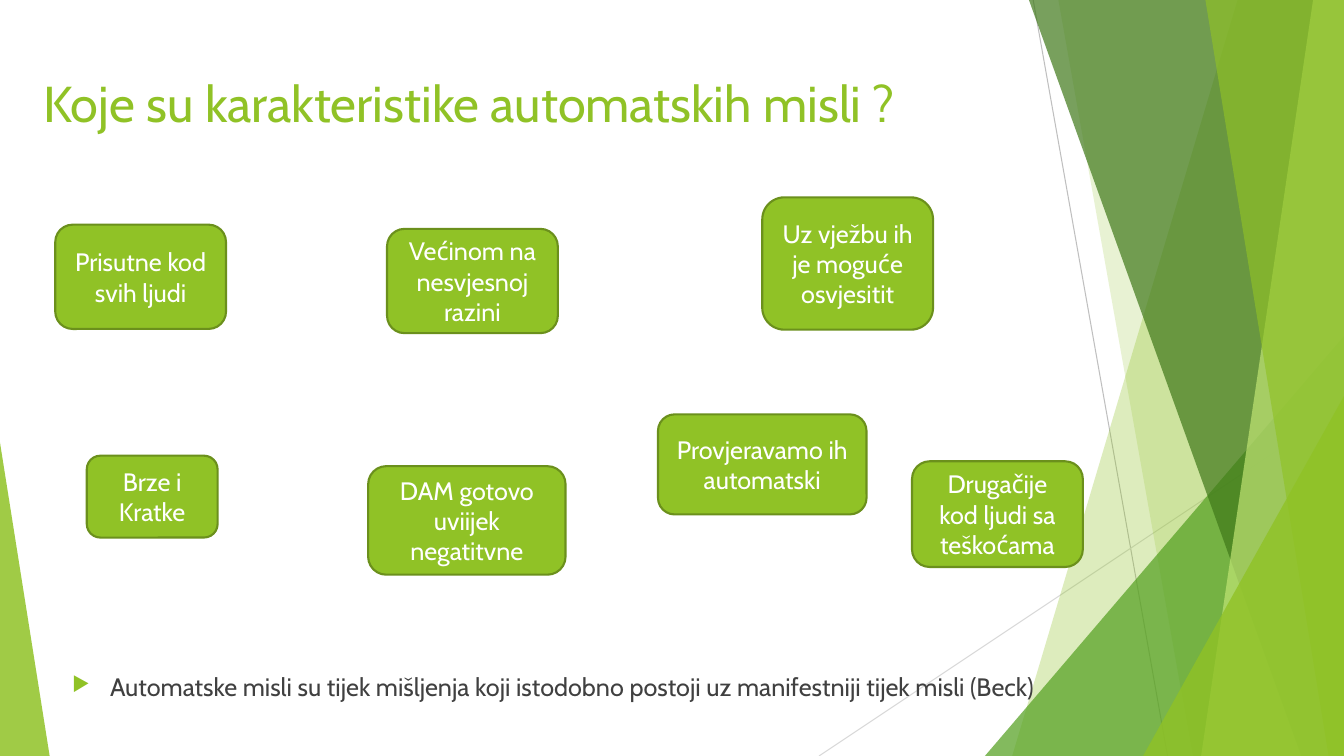
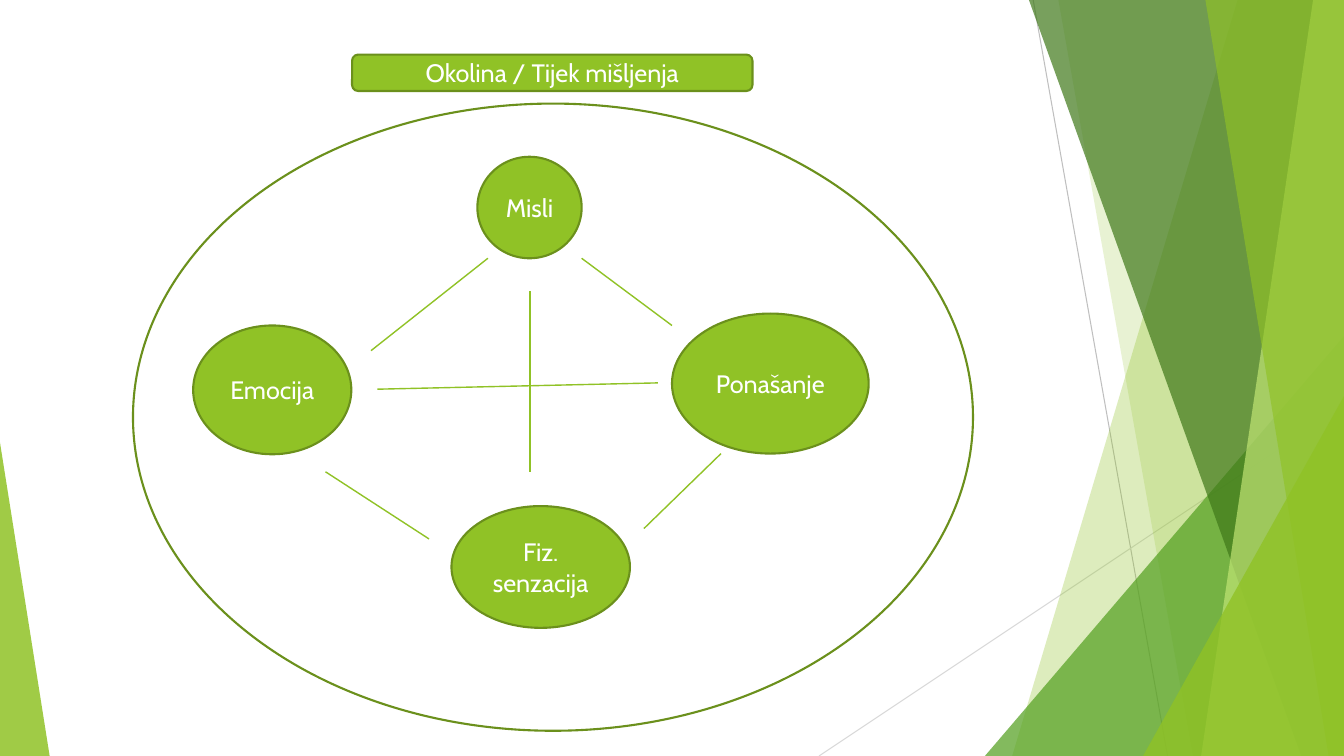
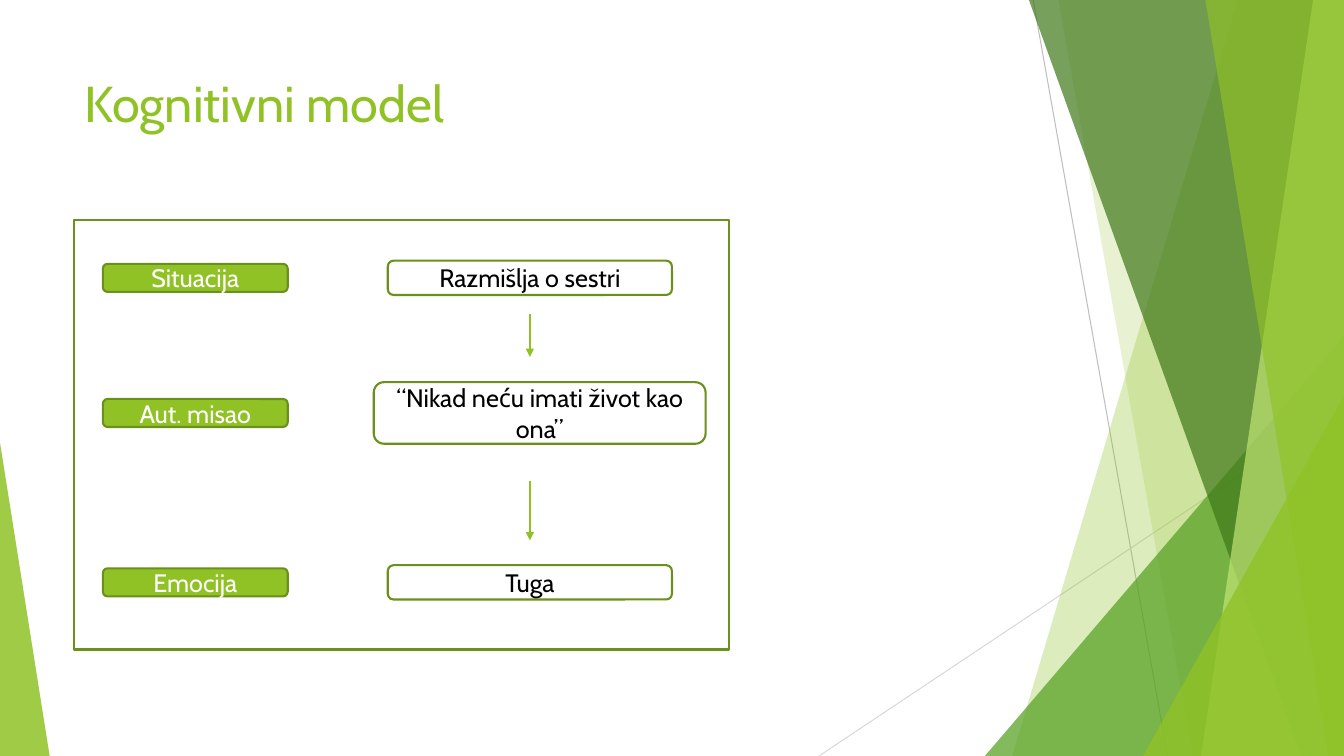
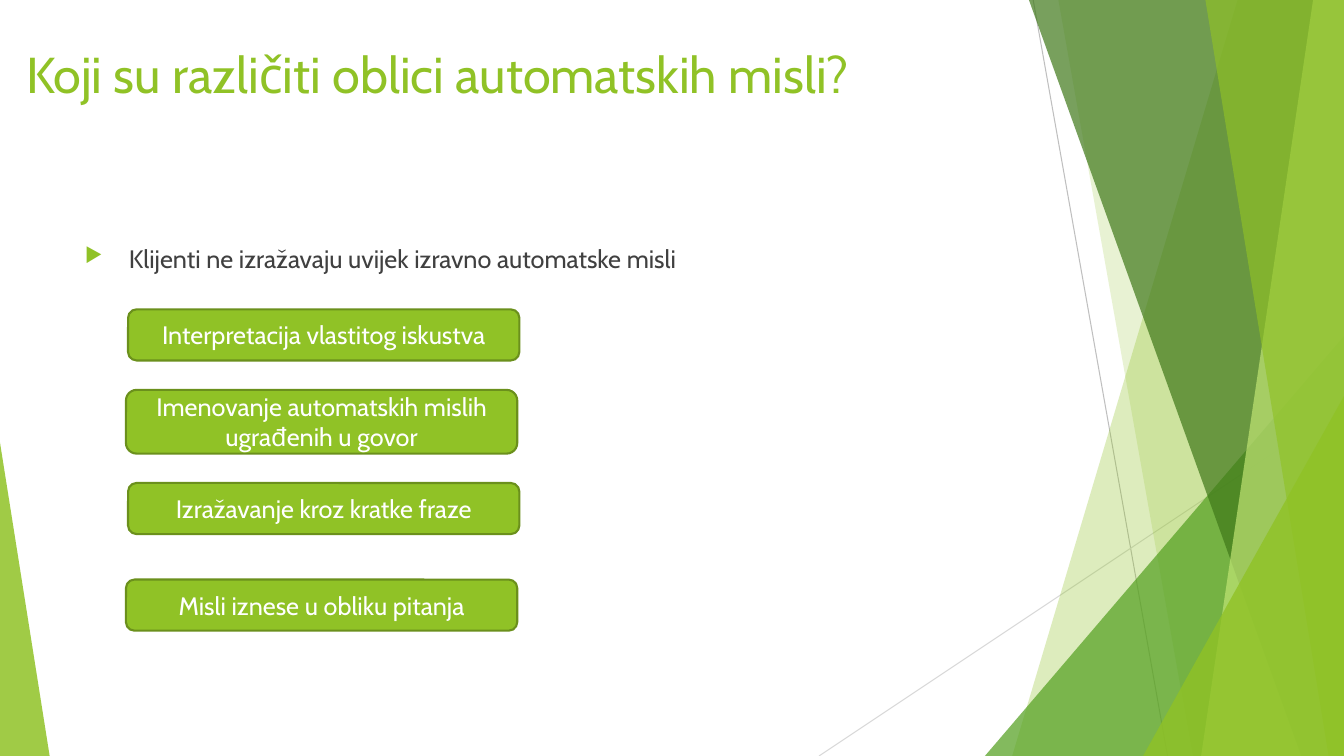
"""Four slides on automatic thoughts, in a green facet design."""
from lxml import etree
from pptx import Presentation
from pptx import util as u
from pptx.dml.color import RGBColor
from pptx.enum import shapes, text
from pptx.oxml.ns import qn

WIDTH, HEIGHT = 960, 540
FONT = "Cabin"
COLORS = {
    "green": "90C226", "edge": "6B901C", "leaf": "54A021", "forest": "3F7819",
    "lime": "C0E474", "ink": "404040", "black": "000000", "white": "FFFFFF",
    "grey": "BFBFBF", "pale": "D9D9D9",
}
ROUND = shapes.MSO_SHAPE.ROUNDED_RECTANGLE
OVAL = shapes.MSO_SHAPE.OVAL
RECTANGLE = shapes.MSO_SHAPE.RECTANGLE
TRIANGLE = shapes.MSO_SHAPE.ISOSCELES_TRIANGLE

FACET_LINES = [((738, 0), (834, HEIGHT), "grey"), ((WIDTH, 290), (585, HEIGHT), "pale")]
FACETS = [
    ("band", (884, 723), "green", 30),
    ("band", (756, 852), "green", 20),
    ("triangle", (703.5, 240, 256.5, 1), "leaf", 72),
    ("band", (735, 929.5), "forest", 70),
    ("band", (938, 858), "lime", 70),
    ("band", (861, 949), "green", 65),
    ("triangle", (816.5, 283, 143.5, 1), "green", 80),
    ("triangle", (0, 316, 35.5, 0), "green", 85),
]


def pts(values):
    """Turn numbers into point lengths."""
    return [u.Pt(value) for value in values]


def rgb(name):
    """Look up a named colour."""
    return RGBColor.from_string(COLORS[name])


def apply(target, values):
    """Set attributes from a dict."""
    for name, value in values.items():
        setattr(target, name, value)


def shift(box, offset):
    """Move an offset point or box into the given region."""
    return (box[0] + offset[0], box[1] + offset[1], *offset[2:])


def add_span(para, words, color, size=18, font=FONT):
    """Add a styled run to a paragraph."""
    span = para.add_run()
    span.text = words
    apply(span.font, {"name": font, "size": u.Pt(size)})
    span.font.color.rgb = rgb(color)


def add_line(page, start, end, color="green", width=1, arrow=False):
    """Draw a straight line, with an arrowhead at its end if asked."""
    line = page.shapes.add_connector(shapes.MSO_CONNECTOR.STRAIGHT, *pts((*start, *end)))
    line.line.color.rgb = rgb(color)
    line.line.width = u.Pt(width)
    if arrow:
        etree.SubElement(line.line._get_or_add_ln(), qn("a:tailEnd"), type="triangle")
    etree.SubElement(line._element.spPr, qn("a:effectLst"))


def add_card(page, box, words="", kind=ROUND, fill="green", color="white"):
    """Draw an outlined shape with centred text."""
    card = page.shapes.add_shape(kind, *pts(box))
    card.shadow.inherit = False
    card.line.color.rgb = rgb("edge")
    card.line.width = u.Pt(1.5)
    if fill:
        card.fill.solid()
        card.fill.fore_color.rgb = rgb(fill)
    else:
        card.fill.background()
    if words:
        frame = card.text_frame
        apply(frame, {"word_wrap": True, "vertical_anchor": text.MSO_ANCHOR.MIDDLE})
        para = frame.paragraphs[0]
        para.alignment = text.PP_ALIGN.CENTER
        add_span(para, words, color)


def add_facet(page, kind, place, color, opacity):
    """Draw one translucent facet of the background."""
    if kind == "band":
        top, bottom = place
        outline = page.shapes.build_freeform(*pts((top, 0)))
        corners = [(WIDTH, 0), (WIDTH, HEIGHT), (bottom, HEIGHT)]
        outline.add_line_segments([pts(corner) for corner in corners])
        facet = outline.convert_to_shape()
    else:
        left, top, width, apex = place
        facet = page.shapes.add_shape(TRIANGLE, *pts((left, top, width, HEIGHT - top)))
        facet.adjustments[0] = apex
    facet.shadow.inherit = False
    facet.line.fill.background()
    facet.fill.solid()
    facet.fill.fore_color.rgb = rgb(color)
    tint = facet._element.spPr.find(qn("a:solidFill"))[0]
    etree.SubElement(tint, qn("a:alpha"), val=str(opacity * 1000))


def add_page(deck):
    """Add a blank slide with the shared background."""
    page = deck.slides.add_slide(deck.slide_layouts[6])
    for start, end, color in FACET_LINES:
        add_line(page, start, end, color, 0.75)
    for facet in FACETS:
        add_facet(page, *facet)
    return page


def add_text_box(page, box):
    """Add a wrapping text box and return its first paragraph."""
    frame = page.shapes.add_textbox(*pts(box)).text_frame
    frame.word_wrap = True
    return frame.paragraphs[0]


def add_title(page, box, words):
    """Write the slide title."""
    add_span(add_text_box(page, box), words, "green", 36)


def add_bullet(page, box, spans):
    """Write a paragraph with a green arrow bullet."""
    para = add_text_box(page, box)
    props = para._p.get_or_add_pPr()
    apply_indent = {"marL": u.Pt(27), "indent": u.Pt(-27)}
    for name, value in apply_indent.items():
        props.set(name, str(value))
    tint = etree.SubElement(props, qn("a:buClr"))
    etree.SubElement(tint, qn("a:srgbClr"), val=COLORS["green"])
    etree.SubElement(props, qn("a:buSzPct"), val="80000")
    etree.SubElement(props, qn("a:buChar"), char="▶")
    for words, font in spans:
        add_span(para, words, "ink", font=font)


def add_traits(page, box):
    """Scatter the trait cards over the box."""
    traits = [
        ((0, 19.5, 122, 74.5), "Prisutne kod svih ljudi"),
        ((237, 22.5, 122, 74.5), "Većinom na nesvjesnoj razini"),
        ((505, 0, 122, 94.5), "Uz vježbu ih je moguće osvjesitit"),
        ((430.5, 155, 149, 71.5), "Provjeravamo ih automatski"),
        ((612, 188.5, 122, 75.5), "Drugačije kod ljudi sa teškoćama"),
        ((22.5, 184.5, 93.5, 58.5), "Brze i Kratke"),
        ((223.5, 192, 141, 77.5), "DAM gotovo uviijek negatitvne"),
    ]
    for place, words in traits:
        add_card(page, shift(box, place), words)


def add_cycle(page, box):
    """Draw the linked ovals inside one large oval that fills the box."""
    nodes = [
        ((43, 158.5, 113, 92), "Emocija"),
        ((246, 38, 74.5, 72.5), "Misli"),
        ((227.5, 287.5, 127.5, 87), "Fiz. senzacija"),
        ((385, 150, 140.5, 100), "Ponašanje"),
    ]
    links = [
        ((253.5, 110.5), (170, 176.5)),
        ((320.5, 110.5), (385, 158.5)),
        ((137.5, 263), (211.5, 311)),
        ((365, 303.5), (420, 250)),
        ((283.5, 134), (283.5, 263)),
        ((174.5, 204), (375, 199.5)),
    ]
    for place, words in nodes:
        add_card(page, shift(box, place), words, OVAL)
    add_card(page, box, kind=OVAL, fill=None)
    add_card(page, shift(box, (156.5, -35, 286, 26)), "Okolina / Tijek mišljenja")
    for start, end in links:
        add_line(page, shift(box, start), shift(box, end))


def add_model(page, box):
    """Draw the framed rows of labels and examples, joined by arrows."""
    rows = [
        (41.5, "Situacija", "Razmišlja o sestri", (325.5, 203, 24.5)),
        (138, "Aut. misao", "“Nikad neću imati život kao ona”", (332.5, 237, 44)),
        (259, "Emocija", "Tuga", (325.5, 203, 24.5)),
    ]
    for middle, label, example, (center, width, height) in rows:
        add_card(page, shift(box, (20.5, middle - 10, 132, 20)), label)
        place = (center - width / 2, middle - height / 2, width, height)
        add_card(page, shift(box, place), example, fill=None, color="black")
    for top, bottom in [(67.5, 98), (186.5, 229)]:
        add_line(page, shift(box, (325.5, top)), shift(box, (325.5, bottom)), arrow=True)
    add_card(page, box, kind=RECTANGLE, fill=None)


def add_forms(page, box):
    """Stack the bars that name each form of thought."""
    forms = [
        ((1.5, 0), 36.5, "Interpretacija vlastitog iskustva"),
        ((0, 57.5), 45.5, "Imenovanje automatskih mislih ugrađenih u govor"),
        ((1.5, 124), 36.5, "Izražavanje kroz kratke fraze"),
        ((0, 193), 36.5, "Misli iznese u obliku pitanja"),
    ]
    for corner, height, words in forms:
        add_card(page, shift(box, (*corner, box[2], height)), words)


def main():
    """Build and save the deck."""
    deck = Presentation()
    apply(deck, {"slide_width": u.Pt(WIDTH), "slide_height": u.Pt(HEIGHT)})

    page = add_page(deck)
    add_title(page, (24, 48, 707, 104), "Koje su karakteristike automatskih misli ?")
    add_bullet(page, (44.5, 476, 707, 47), [
        ("Automatske misli su tijek mišljenja koji istodobno postoji uz manifestniji tijek misli (Beck)", FONT),
    ])
    add_traits(page, (39.5, 141, 734, 270))

    add_cycle(add_page(deck), (95, 74, 600, 448))

    page = add_page(deck)
    add_title(page, (53.5, 48, 677, 104), "Kognitivni model")
    add_model(page, (53, 157, 467.5, 307))

    page = add_page(deck)
    add_title(page, (11.5, 27, 760, 104), "Koji su različiti oblici automatskih misli?")
    add_bullet(page, (53.5, 170, 677, 305), [
        (" ", "Times New Roman"),
        ("Klijenti ne izražavaju uvijek izravno automatske misli", FONT),
    ])
    add_forms(page, (90, 221, 279.5, 229.5))

    deck.save("out.pptx")


if __name__ == "__main__":
    main()
